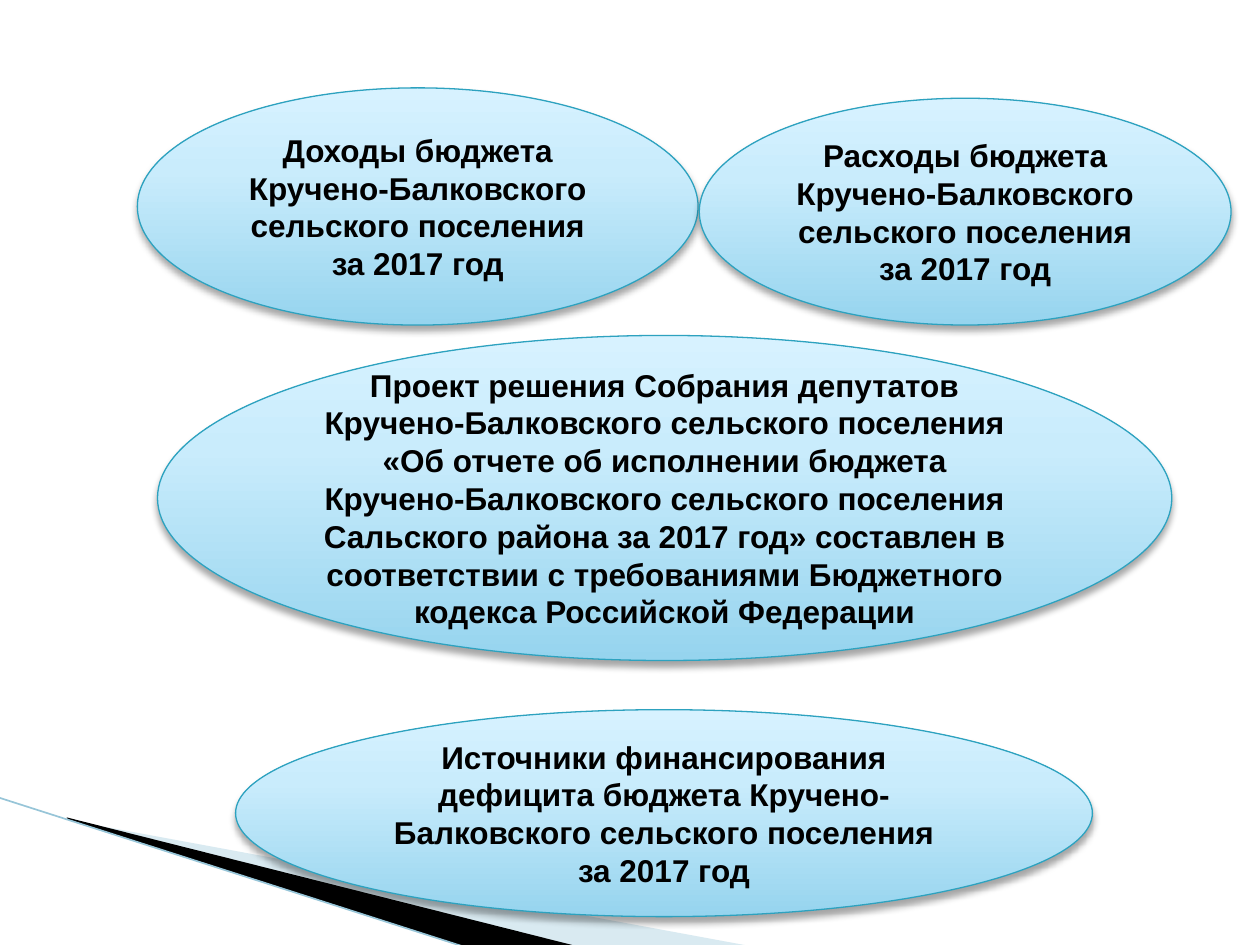
from lxml import etree
from pptx import Presentation
from pptx.dml.color import RGBColor
from pptx.enum.shapes import MSO_CONNECTOR as Connector, MSO_SHAPE as Shape
from pptx.enum.text import MSO_ANCHOR as Anchor, PP_ALIGN as Align
from pptx.oxml import parse_xml
from pptx.oxml.ns import nsdecls, qn
from pptx.util import Inches, Pt

THEME = {
    "font": "Arial",
    "size": Pt(18),
    "text": RGBColor(0, 0, 0),
    "outline": RGBColor.from_string("2DA2BF"),
    "outline_width": Pt(0.75),
    "gradient": [(0, "96D4EE"), (65, "C9ECFC"), (100, "D7F2FF")],
    "pale_wedge": "A0CBDC",
    "dark_wedge": "000000",
    "edge": RGBColor.from_string("97C5D8"),
    "edge_width": Pt(0.95),
}

presentation = Presentation()
presentation.slide_width = Inches(10)
presentation.slide_height = Inches(7.5)
slide = presentation.slides.add_slide(presentation.slide_layouts[6])


def place(x, y):
    """Turn percentages of the slide's width and height into lengths."""
    return (round(presentation.slide_width * x / 100),
            round(presentation.slide_height * y / 100))


# Corner decoration: two wedges and a thin edge
wedges = [
    (THEME["pale_wedge"], 40, [(5.5, 86.8), (59.5, 100.1), (45.6, 100.1), (5.5, 86.7)]),
    (THEME["dark_wedge"], 100, [(5.3, 86.5), (45.7, 100.1), (37.2, 100.3), (5.4, 86.7)]),
]
for color, opacity, corners in wedges:
    points = [place(*corner) for corner in corners]
    builder = slide.shapes.build_freeform(*points[0])
    builder.add_line_segments(points[1:], close=True)
    wedge = builder.convert_to_shape()
    wedge.shadow.inherit = False
    wedge.fill.solid()
    wedge.fill.fore_color.rgb = RGBColor.from_string(color)
    wedge.line.fill.background()
    if opacity < 100:
        color_element = wedge.element.spPr.find(".//" + qn("a:srgbClr"))
        etree.SubElement(color_element, qn("a:alpha")).set("val", str(opacity * 1000))

edge = slide.shapes.add_connector(Connector.STRAIGHT, *place(-0.1, 84.4), *place(37.1, 100.3))
edge.line.color.rgb = THEME["edge"]
edge.line.width = THEME["edge_width"]
etree.SubElement(edge.element.spPr, qn("a:effectLst"))

# Ellipses: left, top, width, height in percent of the slide
ellipses = [
    (10.9, 9.3, 44.5, 25.1,
     "Доходы бюджета Кручено-Балковского сельского поселения за 2017 год"),
    (12.5, 35.5, 80.5, 34.4,
     "Проект решения Собрания депутатов Кручено-Балковского сельского поселения "
     "«Об отчете об исполнении бюджета Кручено-Балковского сельского поселения "
     "Сальского района за 2017 год» составлен в соответствии с требованиями "
     "Бюджетного кодекса Российской Федерации"),
    (55.5, 10.4, 42.2, 24,
     "Расходы бюджета Кручено-Балковского сельского поселения за 2017 год"),
    (18.7, 75.1, 68, 21.9,
     "Источники финансирования дефицита бюджета Кручено-Балковского "
     "сельского поселения за 2017 год"),
]
stops = "".join(
    f'<a:gs pos="{position * 1000}"><a:srgbClr val="{color}"/></a:gs>'
    for position, color in THEME["gradient"]
)
for left, top, width, height, text in ellipses:
    ellipse = slide.shapes.add_shape(Shape.OVAL, *place(left, top), *place(width, height))
    ellipse.line.color.rgb = THEME["outline"]
    ellipse.line.width = THEME["outline_width"]

    ellipse.fill.gradient()
    ellipse.fill.gradient_angle = 90
    properties = ellipse.element.spPr
    old_stops = properties.find(".//" + qn("a:gsLst"))
    old_stops.getparent().replace(
        old_stops, parse_xml(f'<a:gsLst {nsdecls("a")}>{stops}</a:gsLst>'))

    ellipse.shadow.inherit = False
    properties.find(qn("a:effectLst")).append(parse_xml(
        f'<a:outerShdw {nsdecls("a")} blurRad="{Pt(4)}" dist="{Pt(3)}" dir="5400000" '
        'rotWithShape="0"><a:srgbClr val="000000"><a:alpha val="35000"/></a:srgbClr>'
        '</a:outerShdw>'))

    text_frame = ellipse.text_frame
    text_frame.word_wrap = True
    text_frame.vertical_anchor = Anchor.MIDDLE
    text_frame.text = text
    paragraph = text_frame.paragraphs[0]
    paragraph.alignment = Align.CENTER
    font = paragraph.runs[0].font
    font.name = THEME["font"]
    font.size = THEME["size"]
    font.bold = True
    font.color.rgb = THEME["text"]

presentation.save("out.pptx")
